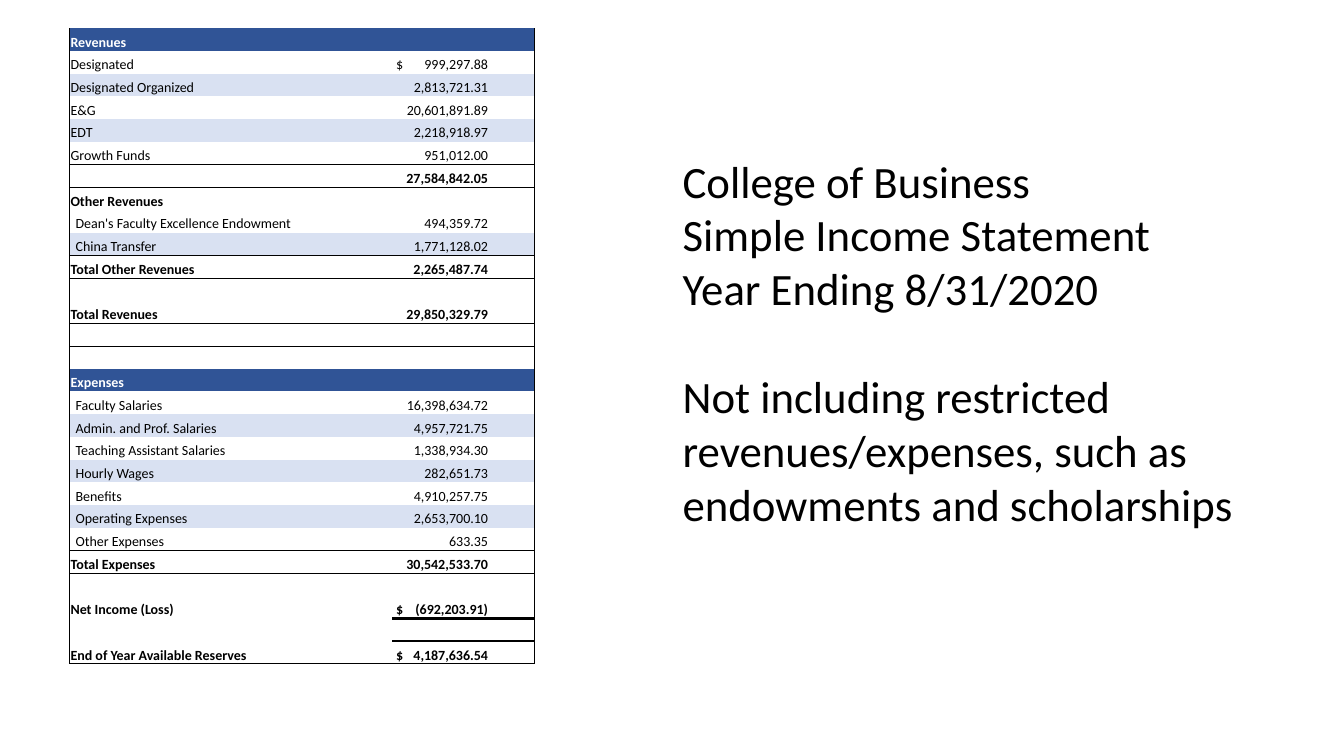
from lxml import etree
from pptx import Presentation
from pptx.dml.color import RGBColor
from pptx.enum import text
from pptx.oxml.ns import qn
from pptx.util import Inches, Pt

BLACK = RGBColor(0x00, 0x00, 0x00)
WHITE = RGBColor(0xFF, 0xFF, 0xFF)
NAVY = RGBColor(0x30, 0x54, 0x96)
PALE = RGBColor(0xD9, 0xE1, 0xF2)
FONT = "Calibri"
NO_STYLE = "{2D5ABB26-0587-4C30-8999-92F81FD0307C}"
THIN, THICK = 0.5, 2

# Row kinds: head, item, sub (indented item), total, blank
# (kind, label, amount, banded, rule under label, rule under amount)
ROWS = [
    ("head", "Revenues", "", False, 0, 0),
    ("item", "Designated", "$\t999,297.88", False, 0, 0),
    ("item", "Designated Organized", "\t2,813,721.31", True, 0, 0),
    ("item", "E&G", "\t20,601,891.89", False, 0, 0),
    ("item", "EDT", "\t2,218,918.97", True, 0, 0),
    ("item", "Growth Funds", "\t951,012.00", False, THIN, THIN),
    ("total", "", "\t27,584,842.05", False, 0, 0),
    ("total", "Other Revenues", "", False, 0, 0),
    ("sub", "Dean's Faculty Excellence Endowment", "\t494,359.72", False, 0, 0),
    ("sub", "China Transfer", "\t1,771,128.02", True, THIN, THIN),
    ("total", "Total Other Revenues", "\t2,265,487.74", False, 0, 0),
    ("blank", "", "", False, 0, 0),
    ("total", "Total Revenues", "\t29,850,329.79", False, THIN, THIN),
    ("blank", "", "", False, 0, 0),
    ("blank", "", "", False, 0, 0),
    ("head", "Expenses", "", False, 0, 0),
    ("sub", "Faculty Salaries", "\t16,398,634.72", False, 0, 0),
    ("sub", "Admin. and Prof. Salaries", "\t4,957,721.75", True, 0, 0),
    ("sub", "Teaching Assistant Salaries", "\t1,338,934.30", False, 0, 0),
    ("sub", "Hourly Wages", "\t282,651.73", True, 0, 0),
    ("sub", "Benefits", "\t4,910,257.75", False, 0, 0),
    ("sub", "Operating Expenses", "\t2,653,700.10", True, 0, 0),
    ("sub", "Other Expenses", "\t633.35", False, THIN, THIN),
    ("total", "Total Expenses", "\t30,542,533.70", False, 0, 0),
    ("blank", "", "", False, 0, 0),
    ("total", "Net Income (Loss)", "$\t(692,203.91)", False, 0, THICK),
    ("blank", "", "", False, 0, 0),
    ("total", "End of Year Available Reserves", "$\t4,187,636.54", False, THIN, THIN),
]


def set_borders(cell, widths):
    """widths maps L, R, T, B to points; sides at 0 stay without a line."""
    tcPr = cell._tc.get_or_add_tcPr()
    sides = [side for side in "LRTB" if widths.get(side)]
    for i, side in enumerate(sides):
        ln = etree.Element(qn("a:ln" + side), w=str(Pt(widths[side])))
        fill = etree.SubElement(ln, qn("a:solidFill"))
        etree.SubElement(fill, qn("a:srgbClr"), val=str(BLACK))
        tcPr.insert(i, ln)


def add_right_tab(p, position):
    tabs = etree.SubElement(p._p.get_or_add_pPr(), qn("a:tabLst"))
    etree.SubElement(tabs, qn("a:tab"), pos=str(position), algn="r")


def fill_cell(cell, kind, words, banded, left_margin, tab=None):
    cell.margin_left = left_margin
    cell.margin_right = cell.margin_top = Inches(0.01)
    cell.margin_bottom = 0
    cell.vertical_anchor = text.MSO_ANCHOR.BOTTOM
    if kind == "head" or banded:
        cell.fill.solid()
        cell.fill.fore_color.rgb = NAVY if kind == "head" else PALE
    else:
        cell.fill.background()
    p = cell.text_frame.paragraphs[0]
    if not words:
        # Keeps empty rows as low as the others
        p._p.get_or_add_endParaRPr().set("sz", "1000")
        return
    if tab:
        add_right_tab(p, tab)
    p.add_run().text = words
    p.font.name, p.font.size = FONT, Pt(10)
    p.font.bold = kind in ("head", "total")
    p.font.color.rgb = WHITE if kind == "head" else BLACK


def add_statement(s, x, y, w, h):
    label_w = Inches(3.2)
    table = s.shapes.add_table(len(ROWS), 2, x, y, w, h).table
    table.first_row = table.horz_banding = False
    table._tbl.tblPr.find(qn("a:tableStyleId")).text = NO_STYLE
    table.columns[0].width, table.columns[1].width = label_w, w - label_w
    rule_above = (0, 0)
    for i, (kind, label, amount, banded, *rules) in enumerate(ROWS):
        table.rows[i].height = int(h / len(ROWS))
        label_cell, amount_cell = table.cell(i, 0), table.cell(i, 1)
        indent = Inches(0.06 if kind == "sub" else 0.01)
        fill_cell(label_cell, kind, label, banded, indent)
        fill_cell(amount_cell, kind, amount, banded, Inches(0.04), Inches(0.91))
        set_borders(label_cell, {"L": THIN, "T": rule_above[0], "B": rules[0]})
        set_borders(amount_cell, {"R": THIN, "T": rule_above[1], "B": rules[1]})
        rule_above = rules


def set_title(s, x, y, w, h):
    sp = s.shapes.title
    sp.left, sp.top, sp.width, sp.height = x, y, w, h
    tf = sp.text_frame
    tf.word_wrap = True
    tf.auto_size = text.MSO_AUTO_SIZE.SHAPE_TO_FIT_TEXT
    tf.vertical_anchor = text.MSO_ANCHOR.TOP
    tf.text = "\n".join([
        "College of Business",
        "Simple Income Statement",
        "Year Ending 8/31/2020",
        "Not including restricted revenues/expenses, such as endowments and scholarships",
    ])
    for p in tf.paragraphs:
        p.alignment = text.PP_ALIGN.LEFT
        p.line_spacing = 1.0
        p.space_before = Pt(0)
        p.font.name, p.font.size = FONT, Pt(32)
        p.font.color.rgb = BLACK
    tf.paragraphs[-1].space_before = Pt(39)  # sets the note apart


def main():
    prs = Presentation()
    prs.slide_width, prs.slide_height = Inches(13.33), Inches(7.5)
    s = prs.slides.add_slide(prs.slide_layouts[5])
    # Heading and note on the right
    set_title(s, Inches(6.67), Inches(1.47), Inches(6.67), Inches(3.87))
    # Income statement on the left
    add_statement(s, Inches(0.69), Inches(0.28), Inches(4.61), Inches(6.31))
    prs.save("out.pptx")


if __name__ == "__main__":
    main()
